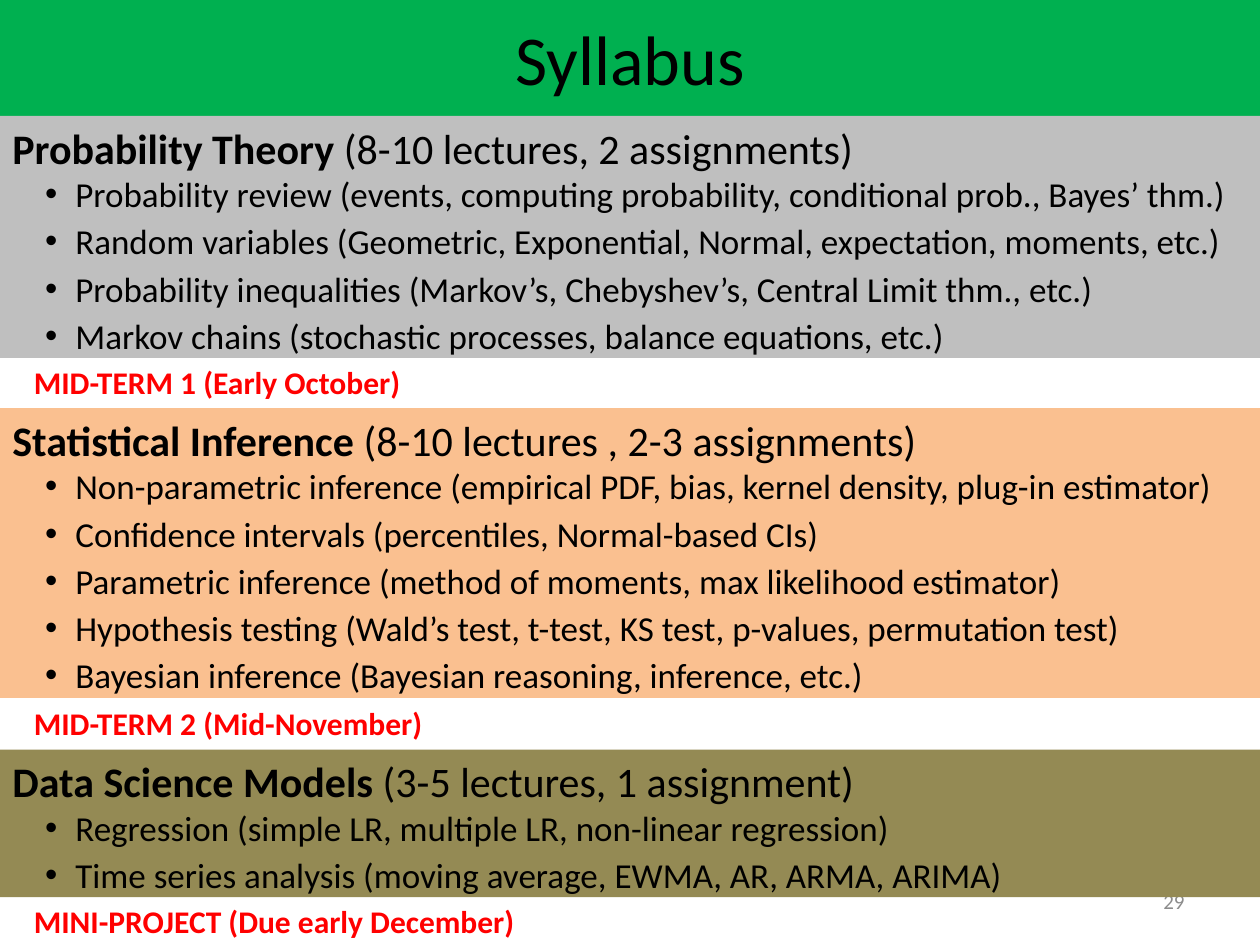
from pptx import Presentation
from pptx.dml.color import RGBColor
from pptx.enum.shapes import MSO_SHAPE
from pptx.enum.text import MSO_ANCHOR, PP_ALIGN
from pptx.util import Inches, Pt
from lxml.etree import SubElement
from pptx.oxml.ns import qn


def style(para, size, color, bold=None):
    font = para.font
    font.name = "Calibri"
    font.size = Pt(size)
    font.bold = bold
    font.color.rgb = RGBColor.from_string(color)


def band(top, height, fill):
    shape = slide.shapes.add_shape(
        MSO_SHAPE.RECTANGLE, 0, Inches(top), Inches(10), Inches(height))
    shape.shadow.inherit = False
    shape.fill.solid()
    shape.fill.fore_color.rgb = RGBColor.from_string(fill)
    shape.line.fill.background()
    shape.text_frame.word_wrap = True
    return shape.text_frame


deck = Presentation()
deck.slide_width = Inches(10)
deck.slide_height = Inches(7.5)
slide = deck.slides.add_slide(deck.slide_layouts[6])

frame = band(0, 0.92, "00B050")
frame.vertical_anchor = MSO_ANCHOR.MIDDLE
para = frame.paragraphs[0]
para.text = "Syllabus"
para.alignment = PP_ALIGN.CENTER
style(para, 40, "000000")

box = slide.shapes.add_textbox(Inches(7.17), Inches(6.95), Inches(2.33), Inches(0.4))
frame = box.text_frame
frame.word_wrap = True
frame.vertical_anchor = MSO_ANCHOR.MIDDLE
para = frame.paragraphs[0]
para.text = "29"
para.alignment = PP_ALIGN.RIGHT
style(para, 12, "8C8C8C")

parts = [
    (5.95, 1.17, "948A54", "Data Science Models ", "(3-5 lectures, 1 assignment)", [
        "Regression (simple LR, multiple LR, non-linear regression)",
        "Time series analysis (moving average, EWMA, AR, ARMA, ARIMA)",
    ]),
    (3.24, 2.3, "FAC090", "Statistical Inference", " (8-10 lectures , 2-3 assignments)", [
        "Non-parametric inference (empirical PDF, bias, kernel density, plug-in estimator)",
        "Confidence intervals (percentiles, Normal-based CIs)",
        "Parametric inference (method of moments, max likelihood estimator)",
        "Hypothesis testing (Wald’s test, t-test, KS test, p-values, permutation test)",
        "Bayesian inference (Bayesian reasoning, inference, etc.)",
    ]),
    (0.92, 1.92, "BFBFBF", "Probability Theory ", "(8-10 lectures, 2 assignments)", [
        "Probability review (events, computing probability, conditional prob., Bayes’ thm.)",
        "Random variables (Geometric, Exponential, Normal, expectation, moments, etc.)",
        "Probability inequalities (Markov’s, Chebyshev’s, Central Limit thm., etc.)",
        "Markov chains (stochastic processes, balance equations, etc.)",
    ]),
]
for top, height, fill, name, load, topics in parts:
    frame = band(top, height, fill)
    frame.vertical_anchor = MSO_ANCHOR.TOP
    head = frame.paragraphs[0]
    head.alignment = PP_ALIGN.LEFT
    style(head, 24, "000000")
    for text, bold in ((name, True), (load, False)):
        run = head.add_run()
        run.text = text
        run.font.bold = bold
    for topic in topics:
        para = frame.add_paragraph()
        para.text = topic
        para.level = 1
        para.alignment = PP_ALIGN.LEFT
        para.space_after = Pt(3)
        style(para, 20, "000000")
        props = para._p.get_or_add_pPr()
        props.set("marL", str(Inches(0.5)))
        props.set("indent", str(Inches(-0.24)))
        mark = SubElement(props, qn("a:buFont"), typeface="Arial")
        dot = SubElement(props, qn("a:buChar"), char="•")
        rest = props.find(qn("a:defRPr"))
        rest.addprevious(mark)
        rest.addprevious(dot)

exams = [
    (2.83, 3.17, "MID-TERM 1 (Early October)"),
    (5.54, 3.33, "MID-TERM 2 (Mid-November)"),
    (7.11, 4.42, "MINI-PROJECT (Due early December)"),
]
for top, width, text in exams:
    box = slide.shapes.add_textbox(Inches(0.17), Inches(top), Inches(width), Inches(0.4))
    box.text_frame.word_wrap = True
    para = box.text_frame.paragraphs[0]
    para.text = text
    style(para, 18, "FF0000", True)

deck.save("out.pptx")
